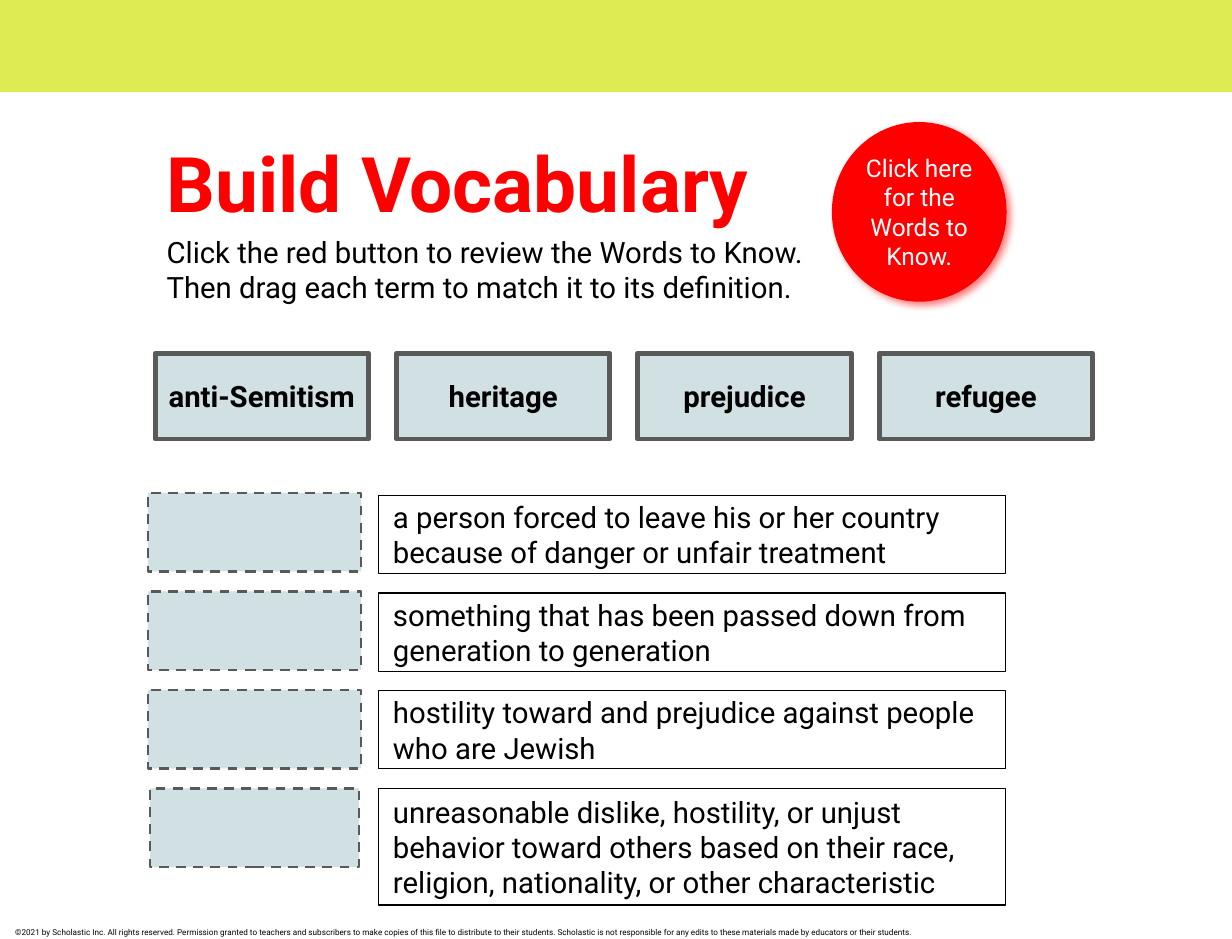
from dataclasses import dataclass
from typing import Optional

from lxml import etree
from pptx import Presentation
from pptx.dml.color import RGBColor
from pptx.enum import dml, shapes, text
from pptx.oxml import ns
from pptx.util import Pt


@dataclass(frozen=True)
class Theme:
    font: str = "Roboto"
    lime: str = "DEEB52"
    red: str = "FF0000"
    pale: str = "D0E0E3"
    gray: str = "595959"
    black: str = "000000"
    white: str = "FFFFFF"
    title_size: float = 47
    body_size: float = 18
    button_size: float = 15
    notice_size: float = 5


THEME = Theme()


@dataclass(frozen=True)
class Box:
    left: float
    top: float
    width: float
    height: float

    def lengths(self) -> tuple:
        return tuple(Pt(n) for n in (self.left, self.top, self.width, self.height))


@dataclass(frozen=True)
class Words:
    content: str
    size: float = THEME.body_size
    color: str = THEME.black
    bold: bool = False
    centered: bool = False
    inset: float = 8.64
    middle: bool = True


@dataclass(frozen=True)
class Outline:
    color: str
    width: float
    dashed: bool = False


def write(shape, words: Words) -> None:
    frame = shape.text_frame
    frame.text = words.content
    frame.word_wrap = True
    frame.vertical_anchor = (text.MSO_ANCHOR.MIDDLE if words.middle
                             else text.MSO_ANCHOR.TOP)
    frame.margin_left = frame.margin_right = Pt(words.inset)
    frame.margin_top = frame.margin_bottom = Pt(words.inset)
    for paragraph in frame.paragraphs:
        paragraph.alignment = (text.PP_ALIGN.CENTER if words.centered
                               else text.PP_ALIGN.LEFT)
        for run in paragraph.runs:
            run.font.name = THEME.font
            run.font.size = Pt(words.size)
            run.font.bold = words.bold
            run.font.color.rgb = RGBColor.from_string(words.color)


def add_label(slide, box: Box, words: Words) -> None:
    write(slide.shapes.add_textbox(*box.lengths()), words)


def add_panel(slide, box: Box, fill: Optional[str] = None,
              outline: Optional[Outline] = None, words: Optional[Words] = None,
              kind=shapes.MSO_SHAPE.RECTANGLE):
    panel = slide.shapes.add_shape(kind, *box.lengths())
    panel.shadow.inherit = False
    if fill:
        panel.fill.solid()
        panel.fill.fore_color.rgb = RGBColor.from_string(fill)
    else:
        panel.fill.background()
    if outline:
        panel.line.color.rgb = RGBColor.from_string(outline.color)
        panel.line.width = Pt(outline.width)
        if outline.dashed:
            panel.line.dash_style = dml.MSO_LINE.DASH
    else:
        panel.line.fill.background()
    if words:
        write(panel, words)
    return panel


def add_glow_shadow(panel, color: str, blur: float, distance: float,
                    degrees: int, opacity: int) -> None:
    effects = panel.element.spPr.find(ns.qn("a:effectLst"))
    shadow = etree.SubElement(
        effects, ns.qn("a:outerShdw"), blurRad=str(Pt(blur)), dist=str(Pt(distance)),
        dir=str(degrees * 60000), algn="bl", rotWithShape="0")
    tint = etree.SubElement(shadow, ns.qn("a:srgbClr"), val=color)
    etree.SubElement(tint, ns.qn("a:alpha"), val=str(opacity * 1000))


TERMS = ["anti-Semitism", "heritage", "prejudice", "refugee"]
DEFINITIONS = [
    "a person forced to leave his or her country because of danger or unfair treatment",
    "something that has been passed down from generation to generation",
    "hostility toward and prejudice against people who are Jewish",
    "unreasonable dislike, hostility, or unjust behavior toward others based on "
    "their race, religion, nationality, or other characteristic",
]
COPYRIGHT = (
    "©2021 by Scholastic Inc. All rights reserved. Permission granted to teachers and "
    "subscribers to make copies of this file to distribute to their students. Scholastic "
    "is not responsible for any edits to these materials made by educators or their students."
)


def main() -> None:
    deck = Presentation()
    deck.slide_width, deck.slide_height = Pt(756), Pt(576)
    slide = deck.slides.add_slide(deck.slide_layouts[6])

    # Top band and copyright line
    add_panel(slide, Box(0, -0.7, 756, 57.2), THEME.lime)
    add_label(slide, Box(9.3, 568.6, 631.4, 7.2),
              Words(COPYRIGHT, THEME.notice_size, inset=0, middle=False))

    # Heading and instructions
    add_label(slide, Box(93.6, 74.9, 394.6, 64),
              Words("Build Vocabulary", THEME.title_size, THEME.red, bold=True, middle=False))
    add_label(slide, Box(93.6, 133.2, 449.3, 64),
              Words("Click the red button to review the Words to Know.\v"
                    "Then drag each term to match it to its definition."))

    # Definitions, the last one three lines tall
    last = len(DEFINITIONS) - 1
    for row, definition in enumerate(DEFINITIONS):
        height = 71.5 if row == last else 48
        add_panel(slide, Box(232.5, 303.7 + 60 * row, 384.5, height),
                  outline=Outline(THEME.black, 0.75), words=Words(definition))

    # Drop slots, the last one slightly narrower
    for row in range(len(DEFINITIONS)):
        trim = 1.4 if row == last else 0
        add_panel(slide, Box(90.7 + trim, 302.4 + 60.4 * row, 131 - 2 * trim, 48.2),
                  THEME.pale, Outline(THEME.gray, 1.5, dashed=True))

    # Red button
    button = add_panel(slide, Box(510.5, 74.9, 107.2, 110.2), THEME.red,
                       words=Words("Click here for the Words to Know.", THEME.button_size,
                                   THEME.white, centered=True, inset=0),
                       kind=shapes.MSO_SHAPE.OVAL)
    add_glow_shadow(button, THEME.red, blur=4.5, distance=3, degrees=43, opacity=50)

    # Term cards
    for column, term in enumerate(TERMS):
        add_panel(slide, Box(95.2 + 148.1 * column, 216.7, 131, 52.6), THEME.pale,
                  Outline(THEME.gray, 3),
                  Words(term, bold=True, centered=True, inset=7.2))

    deck.save("out.pptx")


if __name__ == "__main__":
    main()
